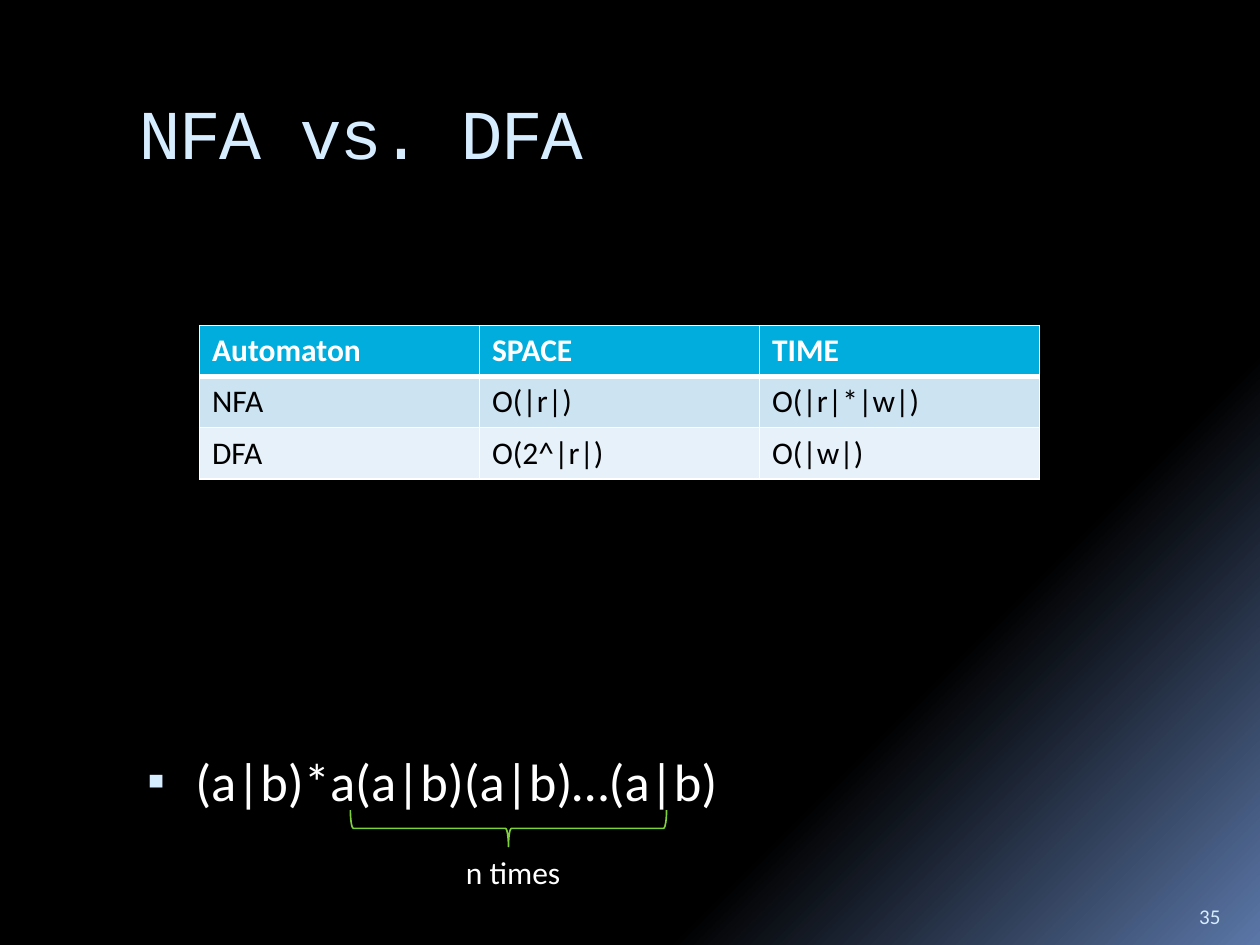
from pptx import Presentation
from pptx.dml.color import RGBColor
from pptx.enum.shapes import MSO_SHAPE
from pptx.enum.text import MSO_ANCHOR as Anchor, MSO_AUTO_SIZE as AutoSize, PP_ALIGN as Align
from pptx.oxml.ns import qn
from pptx.util import Pt
from lxml.etree import SubElement

# Content
TITLE = "NFA vs. DFA"
EXPRESSION = "(a|b)*a(a|b)(a|b)…(a|b)"
BRACE_LABEL = "n times"
SLIDE_NUMBER = "35"
COMPLEXITY = [
    ("Automaton", "SPACE", "TIME"),
    ("NFA", "O(|r|)", "O(|r|*|w|)"),
    ("DFA", "O(2^|r|)", "O(|w|)"),
]

THEME = {
    "heading_font": "Courier New", "body_font": "Calibri",
    "title_size": 40, "body_size": 30, "table_size": 18, "number_size": 12,
    "background": "000000", "glow": "5B77A8", "accent": "D6ECFF",
    "text": "FFFFFF", "dark_text": "000000", "brace": "7FD13B", "border": "FFFFFF",
    "row_fills": ("00ADDC", "CCE3F2", "E7F1F9"),
}

# Layout in points: left, top, width, height
TITLE_BOX = (72, 40.3, 612, 72)
BODY_BOX = (72, 336.2, 612, 164.2)
NUMBER_BOX = (678.2, 505.4, 36, 28.8)
LABEL_BOX = (259.2, 483.8, 69.8, 29)
BRACE_BOX = (280.1, 383, 20.9, 180.7)
TABLE_LEFT, TABLE_TOP, COLUMN_WIDTH, ROW_HEIGHT = 114, 186, 160, 29.2
BULLET_INDENT, BULLET_HANG = 32.4, 27.4


def color(name):
    return RGBColor.from_string(THEME.get(name, name))


def points(box):
    return [Pt(value) for value in box]


def place(shape, box):
    shape.left, shape.top, shape.width, shape.height = points(box)


def write(text_frame, text, size, ink="text", font="body_font", bold=False):
    text_frame.text = text
    paragraph = text_frame.paragraphs[0]
    paragraph.alignment = Align.LEFT
    run = paragraph.runs[0]
    run.font.name = THEME[font]
    run.font.size = Pt(THEME[size])
    run.font.bold = bold
    run.font.color.rgb = color(ink)
    return paragraph


def set_bullet(paragraph):
    properties = paragraph._p.get_or_add_pPr()
    properties.set("marL", str(Pt(BULLET_INDENT)))
    properties.set("indent", str(-Pt(BULLET_HANG)))
    bullet_color = SubElement(properties, qn("a:buClr"))
    SubElement(bullet_color, qn("a:srgbClr"), val=THEME["accent"])
    SubElement(properties, qn("a:buSzPct"), val="95000")
    SubElement(properties, qn("a:buFont"), typeface=THEME["body_font"])
    SubElement(properties, qn("a:buChar"), char="▪")


def set_borders(cell, widths):
    properties = cell._tc.get_or_add_tcPr()
    for position, (side, width) in enumerate(widths.items()):
        line = SubElement(properties, qn(f"a:ln{side}"), w=str(Pt(width)))
        fill = SubElement(line, qn("a:solidFill"))
        SubElement(fill, qn("a:srgbClr"), val=THEME["border"])
        properties.insert(position, line)


def add_background(slide):
    fill = slide.background.fill
    fill.gradient()
    fill.gradient_angle = 315
    for stop, position, name in zip(fill.gradient_stops, (0.73, 1), ("background", "glow")):
        stop.position = position
        stop.color.rgb = color(name)


def add_text(slide):
    # Title
    title = slide.shapes.title
    place(title, TITLE_BOX)
    frame = title.text_frame
    frame.auto_size = AutoSize.NONE
    frame.vertical_anchor = Anchor.TOP
    frame.margin_top = Pt(11)
    paragraph = write(frame, TITLE, "title_size", "accent", "heading_font")
    paragraph.runs[0]._r.get_or_add_rPr().set("spc", "-100")

    # Regular expression, set low in the body
    body = slide.placeholders[1]
    place(body, BODY_BOX)
    frame = body.text_frame
    frame.auto_size = AutoSize.NONE
    frame.vertical_anchor = Anchor.TOP
    frame.margin_top = Pt(92)
    paragraph = write(frame, EXPRESSION, "body_size")
    paragraph.space_before = Pt(0)
    set_bullet(paragraph)

    # Slide number
    frame = slide.shapes.add_textbox(*points(NUMBER_BOX)).text_frame
    frame.word_wrap = True
    frame.vertical_anchor = Anchor.BOTTOM
    write(frame, SLIDE_NUMBER, "number_size", "accent")


def add_brace(slide):
    brace = slide.shapes.add_shape(MSO_SHAPE.RIGHT_BRACE, *points(BRACE_BOX))
    brace.rotation = 90
    brace.shadow.inherit = False
    brace.fill.background()
    brace.line.color.rgb = color("brace")
    brace.line.width = Pt(0.94)

    frame = slide.shapes.add_textbox(*points(LABEL_BOX)).text_frame
    frame.word_wrap = False
    frame.auto_size = AutoSize.SHAPE_TO_FIT_TEXT
    write(frame, BRACE_LABEL, "table_size")


def add_complexity_table(slide):
    rows, columns = len(COMPLEXITY), len(COMPLEXITY[0])
    box = (TABLE_LEFT, TABLE_TOP, columns * COLUMN_WIDTH, rows * ROW_HEIGHT)
    table = slide.shapes.add_table(rows, columns, *points(box)).table
    for column in table.columns:
        column.width = Pt(COLUMN_WIDTH)
    for r, values in enumerate(COMPLEXITY):
        table.rows[r].height = Pt(ROW_HEIGHT)
        header = r == 0
        for c, value in enumerate(values):
            cell = table.cell(r, c)
            write(cell.text_frame, value, "table_size",
                  "text" if header else "dark_text", bold=header)
            cell.fill.solid()
            cell.fill.fore_color.rgb = color(THEME["row_fills"][r])
            set_borders(cell, {"L": 1, "R": 1, "T": 3 if r == 1 else 1, "B": 3 if header else 1})


def main():
    presentation = Presentation()
    presentation.slide_width, presentation.slide_height = Pt(720), Pt(540)
    slide = presentation.slides.add_slide(presentation.slide_layouts[1])
    add_background(slide)
    add_text(slide)
    add_brace(slide)
    add_complexity_table(slide)
    presentation.save("out.pptx")


if __name__ == "__main__":
    main()
